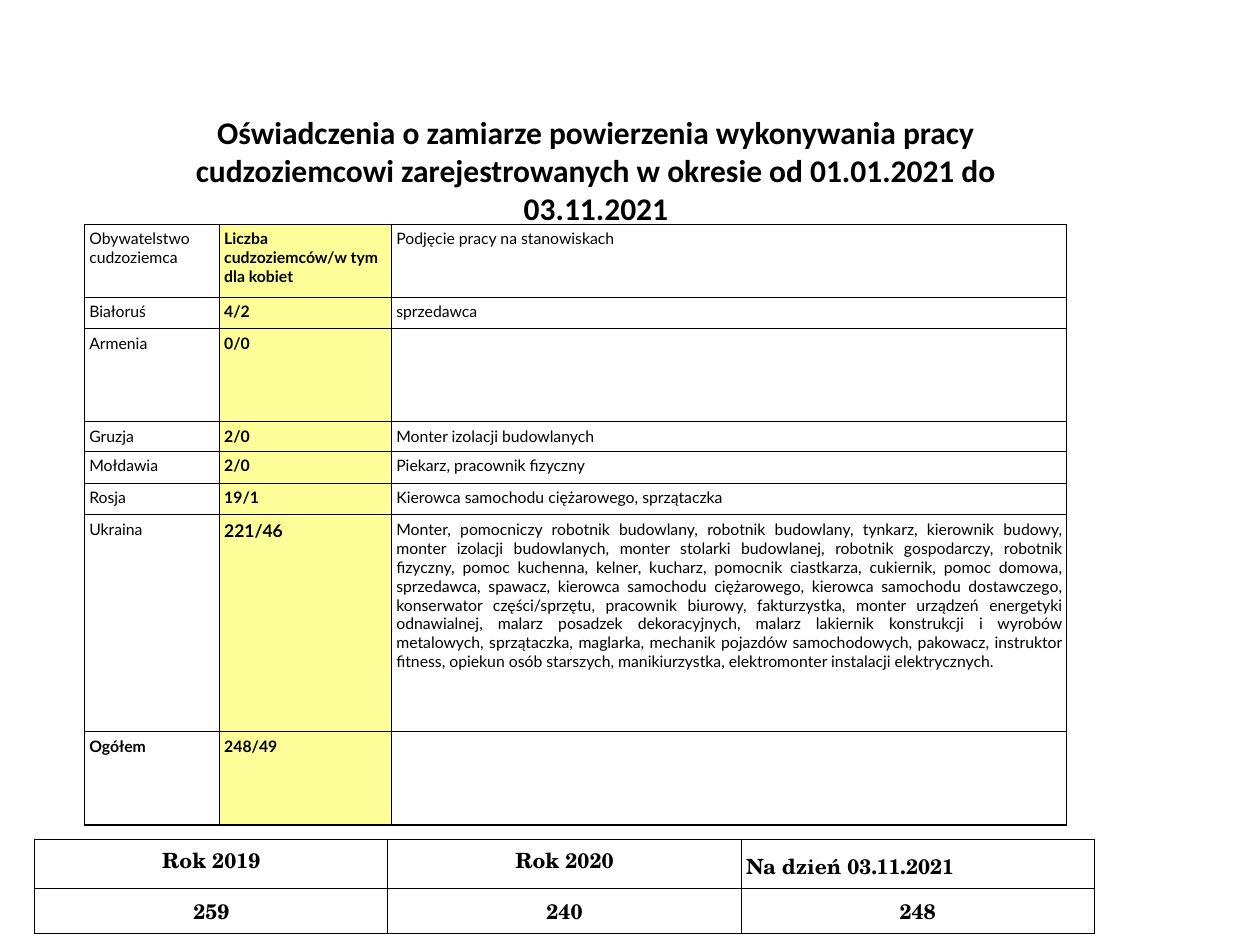
from pptx import Presentation
from pptx.dml.color import RGBColor
from pptx.enum.text import MSO_ANCHOR, MSO_AUTO_SIZE, PP_ALIGN
from pptx.oxml import parse_xml
from pptx.oxml.ns import nsdecls
from pptx.util import Cm, Pt

LEFT, CENTER, JUSTIFY = PP_ALIGN.LEFT, PP_ALIGN.CENTER, PP_ALIGN.JUSTIFY
MIDDLE = MSO_ANCHOR.MIDDLE
NO_FIT = MSO_AUTO_SIZE.NONE
BLACK = RGBColor(0x00, 0x00, 0x00)
YELLOW = RGBColor(0xFF, 0xFF, 0x99)

TITLE = ("Oświadczenia o zamiarze powierzenia wykonywania pracy "
         "cudzoziemcowi zarejestrowanych w okresie od 01.01.2021 do 03.11.2021")
UKRAINE_JOBS = (
    "Monter, pomocniczy robotnik budowlany, robotnik budowlany, tynkarz, "
    "kierownik budowy, monter izolacji budowlanych, monter stolarki budowlanej, "
    "robotnik gospodarczy, robotnik fizyczny, pomoc kuchenna, kelner, kucharz, "
    "pomocnik ciastkarza, cukiernik, pomoc domowa, sprzedawca, spawacz, kierowca "
    "samochodu ciężarowego, kierowca samochodu dostawczego, konserwator "
    "części/sprzętu, pracownik biurowy, fakturzystka, monter urządzeń energetyki "
    "odnawialnej, malarz posadzek dekoracyjnych, malarz lakiernik konstrukcji i "
    "wyrobów metalowych, sprzątaczka, maglarka, mechanik pojazdów samochodowych, "
    "pakowacz, instruktor fitness, opiekun osób starszych, manikiurzystka, "
    "elektromonter instalacji elektrycznych.")
DECLARATIONS = [
    ("Obywatelstwo cudzoziemca", "Liczba cudzoziemców/w tym dla kobiet",
     "Podjęcie pracy na stanowiskach"),
    ("Białoruś", "4/2", "sprzedawca"),
    ("Armenia", "0/0", ""),
    ("Gruzja", "2/0", "Monter izolacji budowlanych"),
    ("Mołdawia", "2/0", "Piekarz, pracownik fizyczny"),
    ("Rosja", "19/1", "Kierowca samochodu ciężarowego, sprzątaczka"),
    ("Ukraina", "221/46", UKRAINE_JOBS),
    ("Ogółem", "248/49", ""),
]
DECLARATION_COLS = [2.72, 3.47, 13.61]
DECLARATION_ROWS = [1.47, 0.64, 1.87, 0.6, 0.64, 0.64, 4.37, 1.88]
YEARS = [("Rok 2019", "Rok 2020", "Na dzień 03.11.2021"), ("259", "240", "248")]
YEAR_COLS = [7.12] * 3
YEAR_ROWS = [0.99, 0.91]
INSET = 0.1


def write(p, text, font="Lato", size=9, bold=False, align=LEFT):
    p.alignment = align
    r = p.add_run()
    r.text = text
    r.font.name, r.font.size, r.font.bold = font, Pt(size), bold
    r.font.color.rgb = BLACK


def set_insets(cell, inset):
    cell.margin_left = cell.margin_right = Cm(inset)
    cell.margin_top = cell.margin_bottom = Cm(inset)


def add_borders(cell):
    tc_pr = cell._tc.get_or_add_tcPr()
    for side in "LRTB":
        tc_pr.append(parse_xml(
            f'<a:ln{side} {nsdecls("a")} w="{Pt(0.75)}"><a:solidFill>'
            f'<a:srgbClr val="{BLACK}"/></a:solidFill></a:ln{side}>'))


def add_grid(s, left, top, cols, rows):
    shape = s.shapes.add_table(len(rows), len(cols), Cm(left), Cm(top),
                               Cm(sum(cols)), Cm(sum(rows)))
    table = shape.table
    table.first_row = table.horz_banding = False
    for column, width in zip(table.columns, cols):
        column.width = Cm(width)
    for row, height in zip(table.rows, rows):
        row.height = Cm(height)
    for cell in table.iter_cells():
        add_borders(cell)
        cell.fill.background()
    return table


def add_title(s):
    title = s.shapes.title
    title.left, title.top, title.width, title.height = Cm(2.31), Cm(3.12), Cm(19.41), Cm(2.21)
    tf = title.text_frame
    tf.word_wrap = True
    tf.auto_size = NO_FIT
    tf.vertical_anchor = MIDDLE
    tf.margin_bottom = Cm(1.73)
    write(tf.paragraphs[0], TITLE, font="Calibri", size=18, bold=True, align=CENTER)


def add_declarations(s):
    table = add_grid(s, 1.7, 4.52, DECLARATION_COLS, DECLARATION_ROWS)
    for i, row in enumerate(DECLARATIONS):
        for j, text in enumerate(row):
            cell = table.cell(i, j)
            set_insets(cell, INSET)
            if j == 1:
                cell.fill.solid()
                cell.fill.fore_color.rgb = YELLOW
            if text:
                write(cell.text_frame.paragraphs[0], text,
                      size=10 if text == "221/46" else 9,
                      bold=j == 1 or text == "Ogółem",
                      align=JUSTIFY if text == UKRAINE_JOBS else LEFT)


def add_years(s):
    table = add_grid(s, 0.7, 16.92, YEAR_COLS, YEAR_ROWS)
    for i, row in enumerate(YEARS):
        for j, text in enumerate(row):
            cell = table.cell(i, j)
            if i == 0:
                set_insets(cell, INSET)
            dated = text.startswith("Na dzień")
            align = LEFT if dated else CENTER
            p = cell.text_frame.paragraphs[0]
            write(p, text, font="TeX Gyre Schola", size=12, bold=True, align=align)
            if dated:
                write(p, " ", font="Calibri", size=18)


def main():
    prs = Presentation()
    prs.slide_width, prs.slide_height = Cm(25.4), Cm(19.05)
    s = prs.slides.add_slide(prs.slide_layouts[5])
    add_title(s)
    add_declarations(s)
    add_years(s)
    prs.save("out.pptx")


if __name__ == "__main__":
    main()
